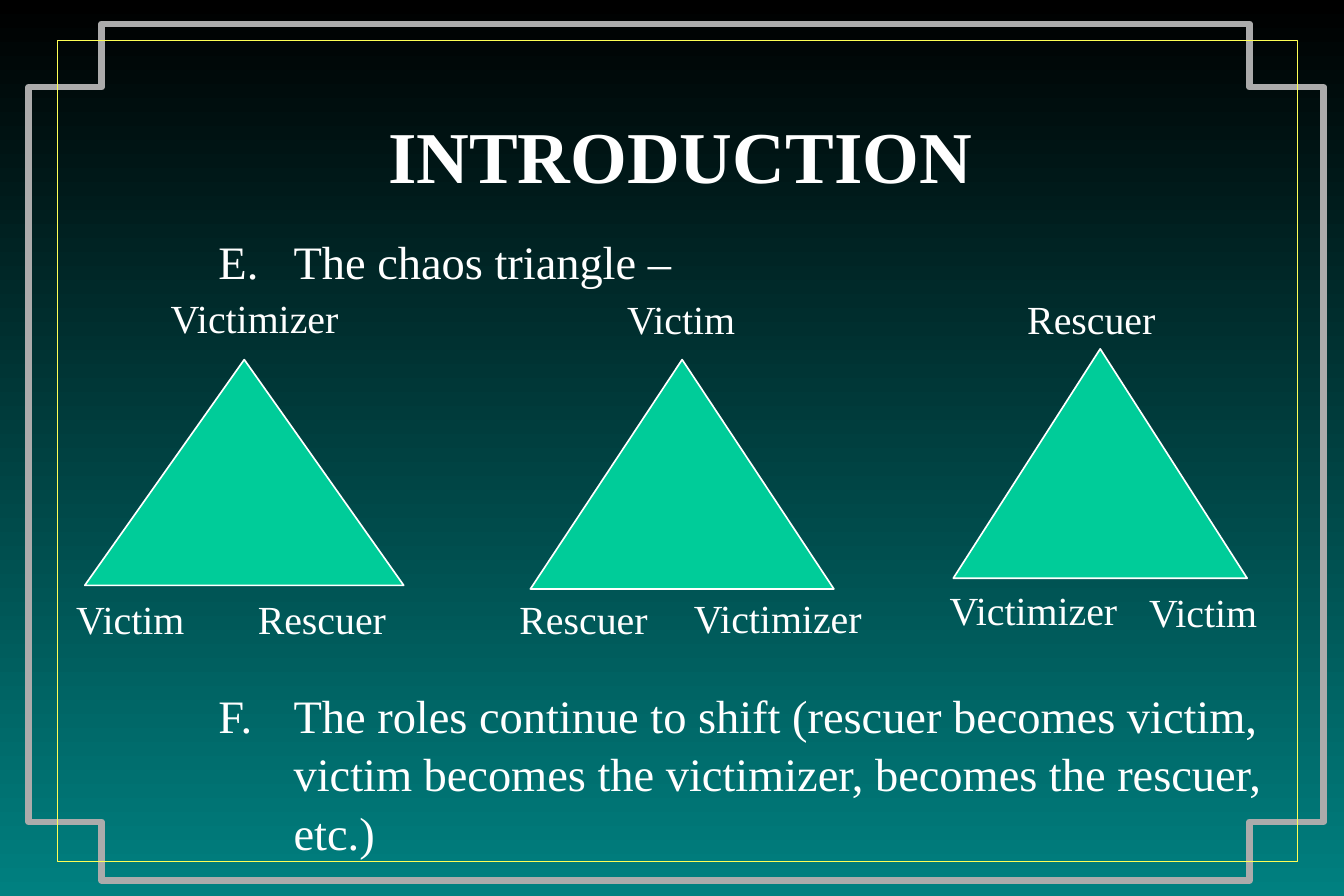
from lxml.etree import SubElement
from pptx import Presentation
from pptx.dml.color import RGBColor
from pptx.enum.shapes import MSO_SHAPE
from pptx.enum.text import MSO_ANCHOR, PP_ALIGN
from pptx.oxml.ns import qn
from pptx.util import Inches, Pt

BLACK = RGBColor(0x00, 0x00, 0x00)
WHITE = RGBColor(0xFF, 0xFF, 0xFF)
TEAL = RGBColor(0x00, 0x80, 0x80)
GREEN = RGBColor(0x00, 0xCC, 0x99)
GRAY = RGBColor(0xAB, 0xAB, 0xAB)
YELLOW = RGBColor(0xFE, 0xFF, 0x55)
FONT = "Times New Roman"
WIDE, HIGH = 11.25, 7.5

TITLE = "INTRODUCTION"
POINTS = [
    "The chaos triangle –",
    "The roles continue to shift (rescuer becomes victim, "
    "victim becomes the victimizer, becomes the rescuer, etc.)",
]
ROLES = [
    ((0.71, 3.01, 2.67, 1.89), [
        ("Victimizer", 1.33, 2.41, 1.88),
        ("Victim", 0.54, 4.93, 1.33),
        ("Rescuer", 2.06, 4.93, 1.33),
    ]),
    ((4.44, 3.01, 2.54, 1.92), [
        ("Victim", 5.15, 2.42, 1.12),
        ("Rescuer", 4.25, 4.93, 1.83),
        ("Victimizer", 5.71, 4.92, 1.75),
    ]),
    ((7.98, 2.92, 2.46, 1.92), [
        ("Rescuer", 8.5, 2.42, 1.42),
        ("Victimizer", 7.85, 4.85, 1.67),
        ("Victim", 9.52, 4.87, 1.13),
    ]),
]
LEFT, STEP, INNER, RIGHT = 0.24, 0.85, 10.46, 11.08
TOP, NOTCH, LOW, BOTTOM = 0.2, 0.73, 6.88, 7.37
NOTCHED = [
    (LEFT, NOTCH), (STEP, NOTCH), (STEP, TOP), (INNER, TOP),
    (INNER, NOTCH), (RIGHT, NOTCH), (RIGHT, LOW), (INNER, LOW),
    (INNER, BOTTOM), (STEP, BOTTOM), (STEP, LOW), (LEFT, LOW),
]
PLAIN = [(0.48, 0.34), (10.86, 0.34), (10.86, 7.21), (0.48, 7.21)]


def add_text(shapes, lines, box, size=24, bold=False, align=PP_ALIGN.LEFT,
             anchor=MSO_ANCHOR.TOP, inset=0.1):
    frame = shapes.add_textbox(*map(Inches, box)).text_frame
    frame.word_wrap = True
    frame.vertical_anchor = anchor
    frame.margin_left = Inches(inset)
    frame.text = "\n".join(lines)
    for para in frame.paragraphs:
        para.alignment = align
        font = para.runs[0].font
        font.name, font.size, font.bold = FONT, Pt(size), bold
        font.color.rgb = WHITE
    return frame


def add_frame(shapes, points, color, width):
    spots = [(Inches(x), Inches(y)) for x, y in points]
    pen = shapes.build_freeform(*spots[0])
    pen.add_line_segments(spots[1:], close=True)
    frame = pen.convert_to_shape()
    frame.shadow.inherit = False
    frame.fill.background()
    frame.line.color.rgb = color
    frame.line.width = Pt(width)


def add_roles(shapes, box, labels):
    group = shapes.add_group_shape().shapes
    shape = group.add_shape(MSO_SHAPE.ISOSCELES_TRIANGLE, *map(Inches, box))
    shape.shadow.inherit = False
    shape.fill.solid()
    shape.fill.fore_color.rgb = GREEN
    shape.line.color.rgb = WHITE
    shape.line.width = Pt(1)
    for name, left, top, width in labels:
        add_text(group, [name], (left, top, width, 0.5))


def add_points(shapes):
    frame = add_text(shapes, POINTS, (1.17, 1.88, 9.83, 4.5), size=28)
    for para in frame.paragraphs:
        para.line_spacing = 1.05
        props = para._p.get_or_add_pPr()
        props.set("marL", str(Inches(1.19)))
        props.set("indent", str(Inches(-0.63)))
        SubElement(props, qn("a:buFont"), typeface=FONT)
        SubElement(props, qn("a:buAutoNum"), type="alphaUcPeriod", startAt="5")
    frame.paragraphs[1].space_before = Pt(238)


def main():
    deck = Presentation()
    deck.slide_width, deck.slide_height = Inches(WIDE), Inches(HIGH)
    slide = deck.slides.add_slide(deck.slide_layouts[6])
    slide.background.fill.solid()
    slide.background.fill.fore_color.rgb = BLACK
    shapes = slide.shapes

    back = shapes.add_shape(MSO_SHAPE.RECTANGLE, 0, 0, Inches(WIDE), Inches(HIGH))
    back.shadow.inherit = False
    back.line.fill.background()
    back.fill.gradient()
    back.fill.gradient_angle = 270
    for stop, color, place in zip(back.fill.gradient_stops, (BLACK, TEAL), (0, 1)):
        stop.color.rgb, stop.position = color, place

    add_frame(shapes, NOTCHED, GRAY, 4)
    add_frame(shapes, PLAIN, YELLOW, 1)
    add_text(shapes, [TITLE], (0.84, 0.67, 9.56, 1.25), size=44, bold=True,
             align=PP_ALIGN.CENTER, anchor=MSO_ANCHOR.MIDDLE, inset=0.25)
    add_points(shapes)
    for box, labels in ROLES:
        add_roles(shapes, box, labels)
    deck.save("out.pptx")


if __name__ == "__main__":
    main()
